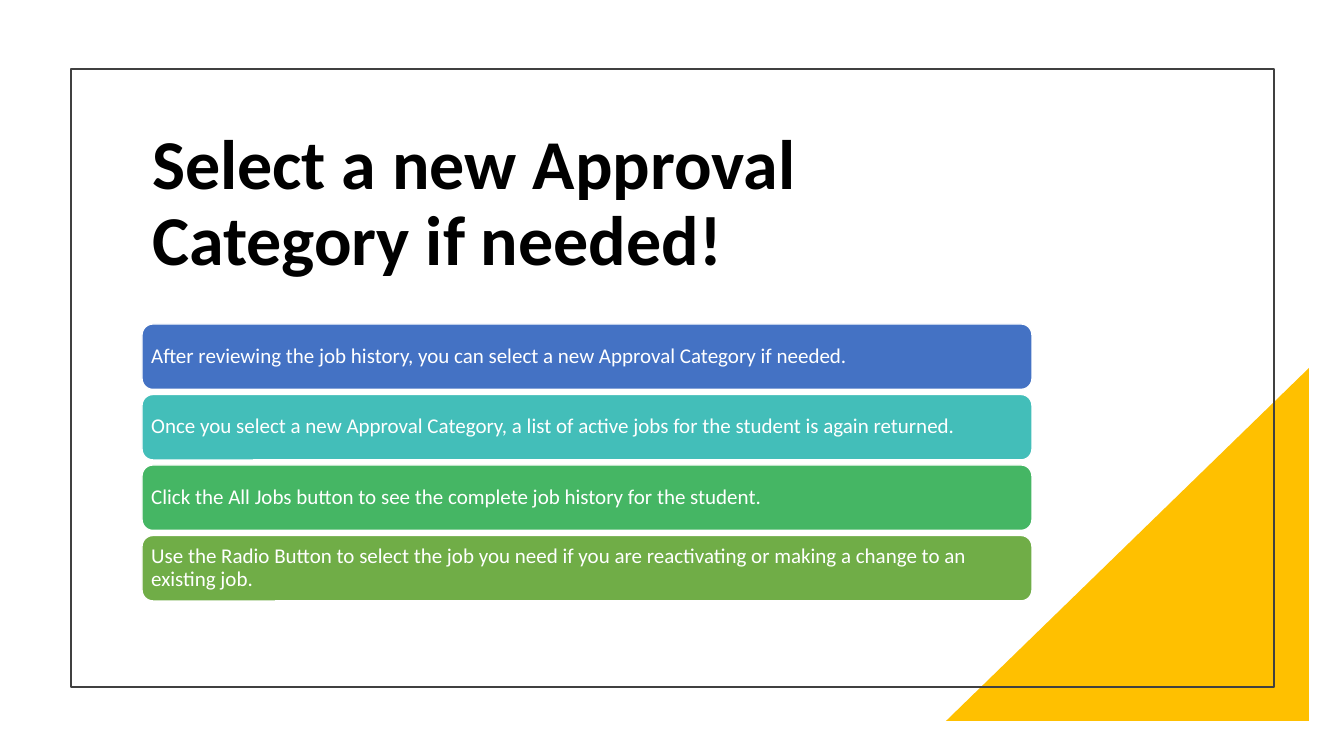
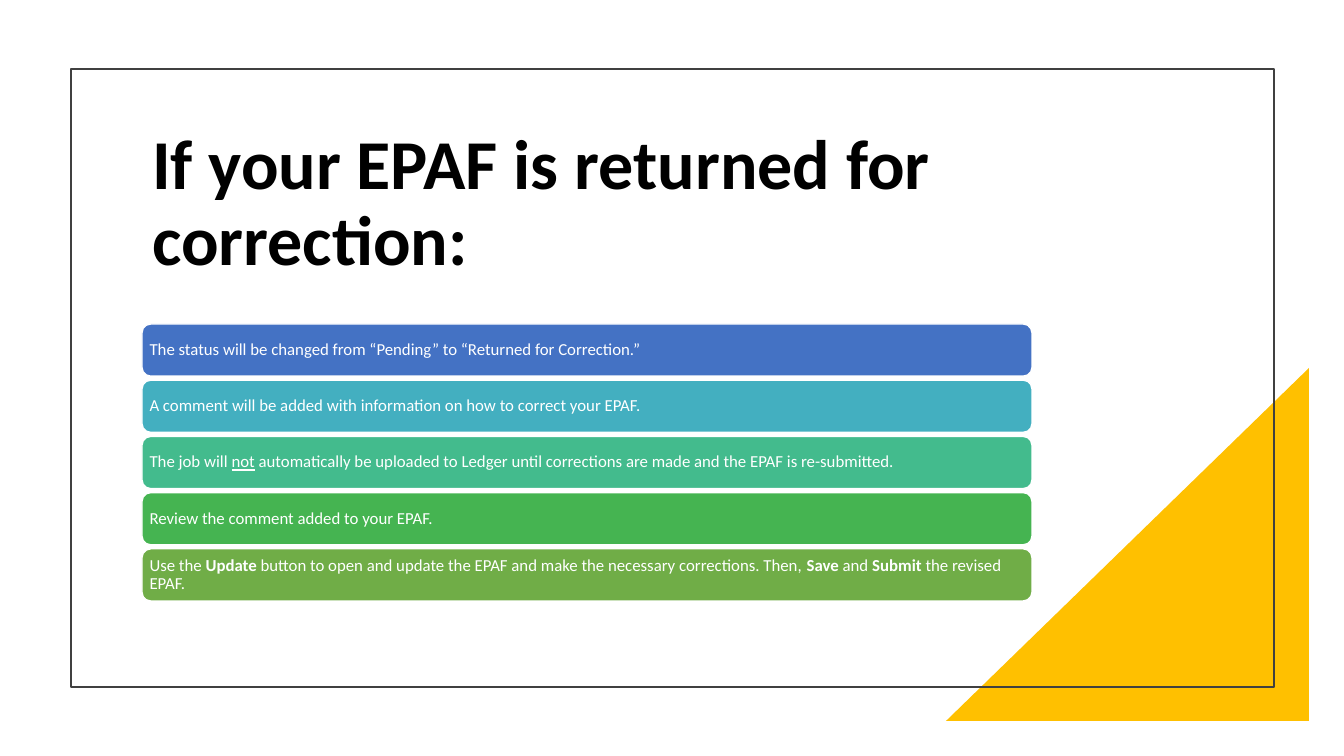
from pptx import Presentation
from pptx.dml.color import RGBColor
from pptx.enum.shapes import MSO_SHAPE
from pptx.enum.text import MSO_ANCHOR, MSO_AUTO_SIZE, PP_ALIGN
from pptx.oxml.ns import qn
from pptx.util import Emu, Pt

COLORS = {
    "title": "000000",
    "text": "FFFFFF",
    "frame": "404040",
    "corner": "FFC000",
    "blue": "4472C4",
    "cyan": "43AFC0",
    "turquoise": "43BEB9",
    "mint": "43BB8D",
    "emerald": "45B664",
    "green": "45B451",
    "olive": "70AD47",
}
FONT = "Calibri"
LEFT, WIDTH = 142, 890
BARS_TOP, BARS_HEIGHT = 324, 277


def px(n):
    return Emu(round(n * 914400 / 100.8))


def rgb(name):
    return RGBColor.from_string(COLORS[name])


class Deck:
    def __init__(self):
        self.prs = Presentation()
        self.prs.slide_width = px(1344)
        self.prs.slide_height = px(756)
        self.s = None

    def slide(self, title):
        self.s = self.prs.slides.add_slide(self.prs.slide_layouts[5])
        corner = self.shape(MSO_SHAPE.RIGHT_TRIANGLE, 946, 368, 363, 353, fill="corner")
        corner.element.spPr.find(qn("a:xfrm")).set("flipH", "1")
        self.shape(MSO_SHAPE.RECTANGLE, 71, 69, 1203, 618, line="frame", line_width=1.5)
        self.title(title)

    def shape(self, kind, x, y, w, h, fill=None, line=None, line_width=1):
        sp = self.s.shapes.add_shape(kind, px(x), px(y), px(w), px(h))
        sp.shadow.inherit = False
        if fill:
            sp.fill.solid()
            sp.fill.fore_color.rgb = rgb(fill)
        else:
            sp.fill.background()
        if line:
            sp.line.color.rgb = rgb(line)
            sp.line.width = Pt(line_width)
        else:
            sp.line.fill.background()
        return sp

    def style(self, p, size, color, bold=None):
        p.alignment = PP_ALIGN.LEFT
        p.line_spacing = 0.9
        for r in p.runs:
            r.font.name = FONT
            r.font.size = Pt(size)
            r.font.color.rgb = rgb(color)
            if bold is not None:
                r.font.bold = bold

    def title(self, text):
        sp = self.s.shapes.title
        sp.left, sp.top, sp.width, sp.height = px(LEFT), px(116), px(WIDTH), px(178)
        tf = sp.text_frame
        tf.text = text
        tf.word_wrap = True
        tf.auto_size = MSO_AUTO_SIZE.NONE
        tf.vertical_anchor = MSO_ANCHOR.MIDDLE
        self.style(tf.paragraphs[0], 50, "title", bold=True)

    def bar(self, y, h, fill, pieces, size, inset):
        sp = self.shape(MSO_SHAPE.ROUNDED_RECTANGLE, LEFT, y, WIDTH, h, fill, "text")
        tf = sp.text_frame
        tf.word_wrap = True
        tf.vertical_anchor = MSO_ANCHOR.MIDDLE
        tf.margin_left = tf.margin_right = tf.margin_top = tf.margin_bottom = px(inset)
        p = tf.paragraphs[0]
        for text, emphasis in pieces:
            r = p.add_run()
            r.text = text
            if emphasis:
                setattr(r.font, emphasis, True)
        self.style(p, size, "text")

    def bars(self, items, size, gap, inset):
        h = (BARS_HEIGHT - gap * (len(items) - 1)) / len(items)
        for i, (fill, content) in enumerate(items):
            pieces = [(content, None)] if isinstance(content, str) else content
            self.bar(BARS_TOP + i * (h + gap), h, fill, pieces, size, inset)


def main():
    deck = Deck()

    deck.slide("Select a new Approval Category if needed!")
    deck.bars([
        ("blue", "After reviewing the job history, you can select a new Approval Category if needed."),
        ("turquoise", "Once you select a new Approval Category, a list of active jobs for the student is again returned."),
        ("emerald", "Click the All Jobs button to see the complete job history for the student."),
        ("olive", "Use the Radio Button to select the job you need if you are reactivating or making a change to an existing job."),
    ], size=15, gap=5, inset=6)

    deck.slide("If your EPAF is returned for correction:")
    deck.bars([
        ("blue", "The status will be changed from “Pending” to “Returned for Correction.”"),
        ("cyan", "A comment will be added with information on how to correct your EPAF."),
        ("mint", [
            ("The job will ", None),
            ("not", "underline"),
            (" automatically be uploaded to Ledger until corrections are made and the EPAF is re-submitted.", None),
        ]),
        ("green", "Review the comment added to your EPAF."),
        ("olive", [
            ("Use the ", None),
            ("Update", "bold"),
            (" button to open and update the EPAF and make the necessary corrections. Then, ", None),
            ("Save", "bold"),
            (" and ", None),
            ("Submit", "bold"),
            (" the revised EPAF.", None),
        ]),
    ], size=12, gap=4, inset=5)

    deck.prs.save("out.pptx")


if __name__ == "__main__":
    main()
